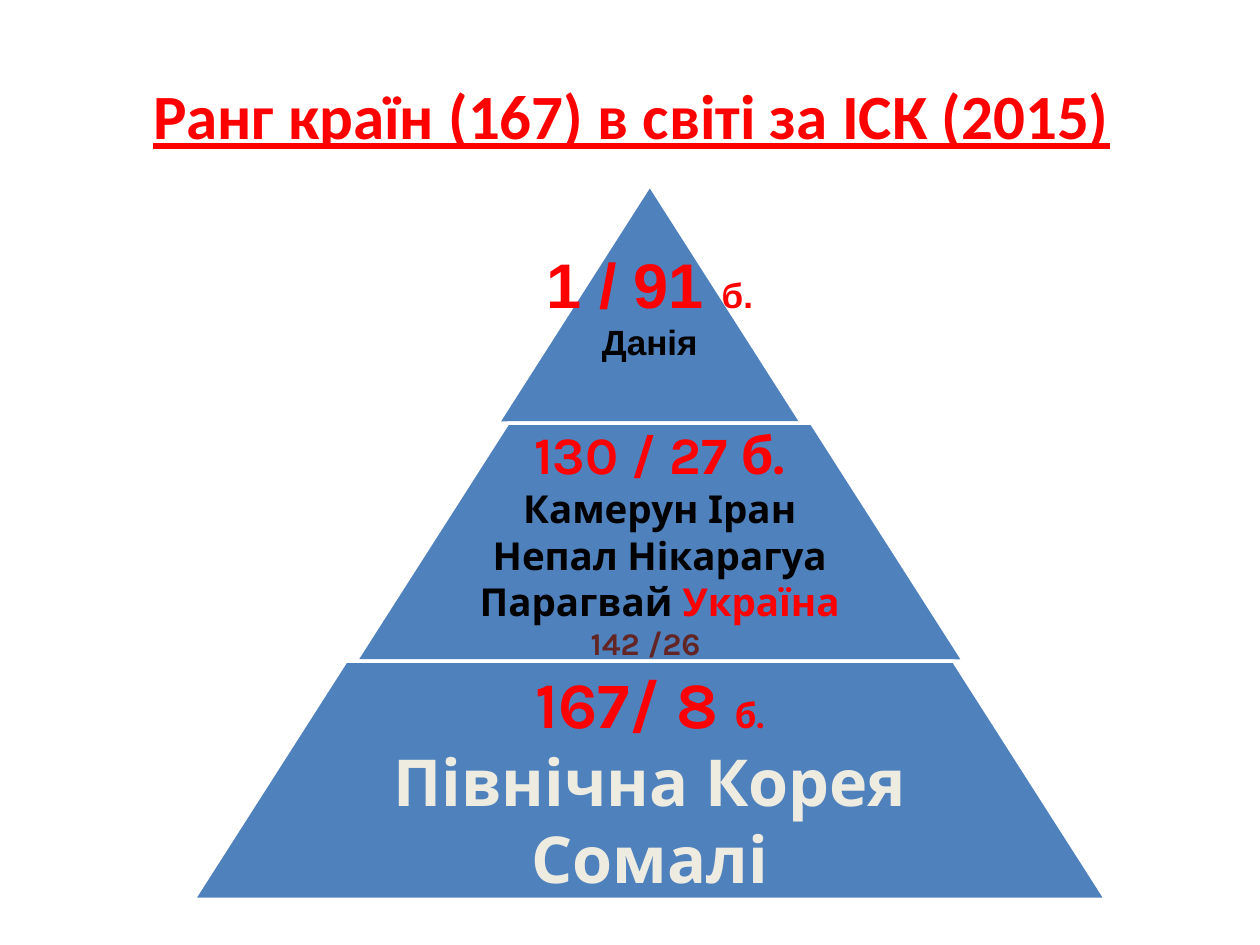
from dataclasses import dataclass

from pptx import Presentation
from pptx.dml.color import RGBColor as Rgb
from pptx.enum.shapes import MSO_SHAPE as Kind
from pptx.enum.text import MSO_ANCHOR as Anchor, PP_ALIGN as Align
from pptx.util import Cm, Pt

HUES = {
    "red": "FF0000",
    "black": "000000",
    "blue": "4F81BD",
    "white": "FFFFFF",
    "brown": "632523",
    "cream": "EEECE1",
}
MID, TOP, STEP, HIGH = 13.1, 3.73, 6.13, 4.8
SLOPE = 0.639


@dataclass
class Run:
    text: str
    size: float
    hue: str


@dataclass
class Line:
    runs: list[Run]
    left: float = 0
    first: float = 0
    align: Align = Align.CENTER


@dataclass
class Tier:
    lines: list[Line]
    font: str
    share: float
    inset: float = 0.13
    shift: float = 0


TIERS = [
    Tier([
        Line([Run("1 / 91 ", 36, "red"), Run("б.", 20, "red")], 0.96, -0.96),
        Line([Run("Данія", 20, "black")], 0.96, -0.96),
    ], "Arial", 1),
    Tier([
        Line([Run("130 / 27 б. ", 30, "red"),
              Run("Камерун Іран Непал Нікарагуа", 22, "black")]),
        Line([Run("Парагвай ", 22, "black"), Run("Україна", 22, "red")]),
        Line([Run("142 /26", 18, "brown")], 2.54, 0, Align.LEFT),
    ], "Karla", 0.65, 0.05, 0.2),
    Tier([
        Line([Run("167/ 8 ", 37, "red"), Run("б.", 20, "red")]),
        Line([Run("Північна Корея Сомалі", 37, "cream")]),
    ], "Karla", 0.65),
]


def tint(name: str) -> Rgb:
    return Rgb.from_string(HUES[name])


def write(para, line: Line, face: str) -> None:
    para.alignment = line.align
    props = para._p.get_or_add_pPr()
    props.set("marL", str(Cm(line.left)))
    props.set("indent", str(Cm(line.first)))
    para.font.name = face
    para.font.bold = True
    for part in line.runs:
        run = para.add_run()
        run.text = part.text
        run.font.size = Pt(part.size)
        run.font.color.rgb = tint(part.hue)
        run.font.name = face
        run.font.bold = True


def draw(slide, tier: Tier, rank: int) -> None:
    wide = STEP * (rank + 1)
    mid = MID + tier.shift
    top = TOP + HIGH * rank
    block = slide.shapes.add_shape(
        Kind.TRAPEZOID, Cm(mid - wide / 2), Cm(top), Cm(wide), Cm(HIGH))
    block.adjustments[0] = SLOPE
    block.shadow.inherit = False
    block.fill.solid()
    block.fill.fore_color.rgb = tint("blue")
    block.line.color.rgb = tint("white")
    block.line.width = Pt(2)

    span = wide * tier.share
    box = slide.shapes.add_textbox(
        Cm(mid - span / 2), Cm(top), Cm(span), Cm(HIGH))
    frame = box.text_frame
    frame.word_wrap = True
    frame.vertical_anchor = Anchor.MIDDLE
    frame.margin_left = frame.margin_right = Cm(tier.inset)
    frame.margin_top = frame.margin_bottom = Cm(tier.inset)
    for i, line in enumerate(tier.lines):
        para = frame.add_paragraph() if i else frame.paragraphs[0]
        write(para, line, tier.font)


def main() -> None:
    deck = Presentation()
    deck.slide_width, deck.slide_height = Cm(25.4), Cm(19.05)
    slide = deck.slides.add_slide(deck.slide_layouts[5])
    title = slide.shapes.title
    title.left, title.top = Cm(1.3), Cm(0.71)
    title.width, title.height = Cm(22.86), Cm(3.18)
    frame = title.text_frame
    frame.vertical_anchor = Anchor.MIDDLE
    frame.text = "Ранг країн (167) в світі за ІСК (2015)"
    para = frame.paragraphs[0]
    para.alignment = Align.CENTER
    font = para.font
    font.name, font.size = "Calibri", Pt(36)
    font.bold = font.underline = True
    font.color.rgb = tint("red")
    for rank, tier in enumerate(TIERS):
        draw(slide, tier, rank)
    deck.save("out.pptx")


if __name__ == "__main__":
    main()
